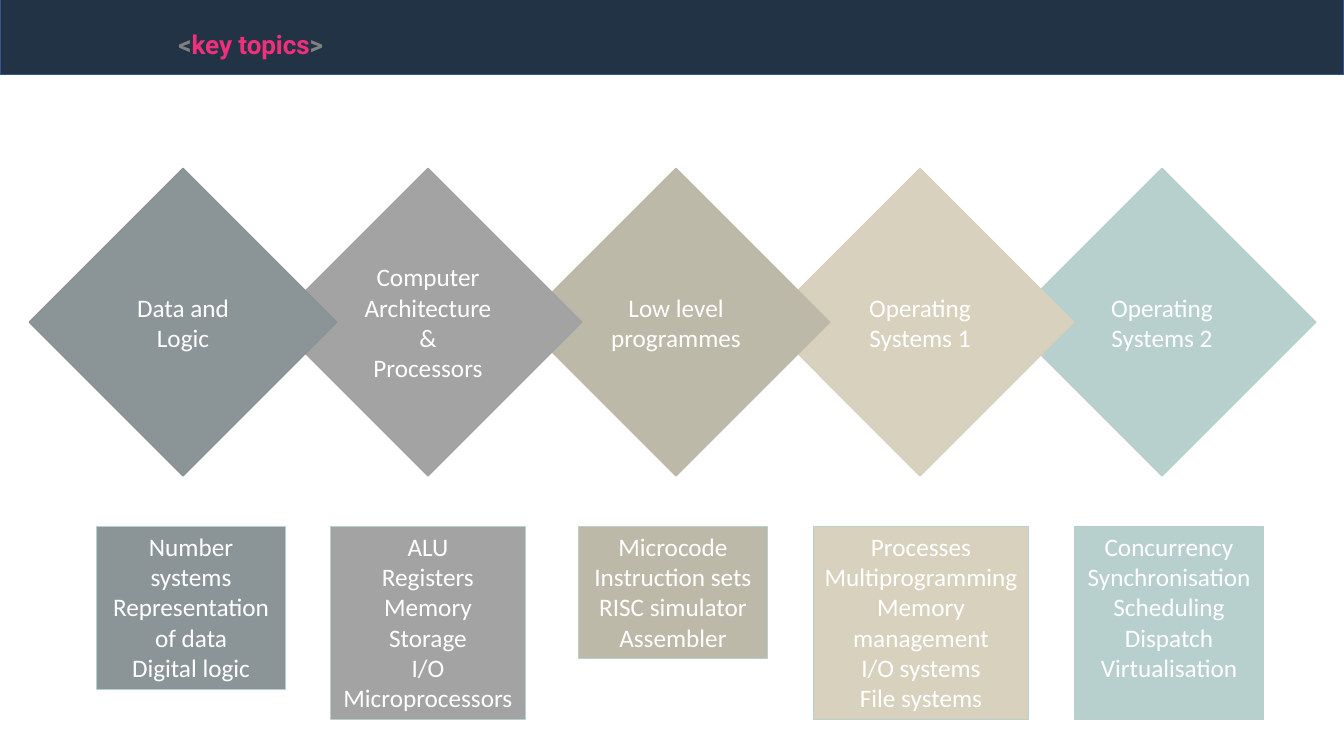
from pptx import Presentation
from pptx.dml.color import RGBColor
from pptx.enum.shapes import MSO_SHAPE
from pptx.enum.text import MSO_ANCHOR, MSO_AUTO_SIZE, PP_ALIGN
from pptx.util import Pt

RECT, DIAMOND = MSO_SHAPE.RECTANGLE, MSO_SHAPE.DIAMOND
TOP, MIDDLE = MSO_ANCHOR.TOP, MSO_ANCHOR.MIDDLE
GROW = MSO_AUTO_SIZE.SHAPE_TO_FIT_TEXT
LEFT, CENTER = PP_ALIGN.LEFT, PP_ALIGN.CENTER

PX = 9144
WIDE, HIGH = 1333, 750
SIDE = 305
WHITE, TEAL = "FFFFFF", "B7D0CE"
LABEL = {"name": "Calibri", "size": Pt(18)}
HEAD = {"name": "Roboto", "size": Pt(32), "bold": True}
BOX = {"word_wrap": True, "auto_size": GROW, "vertical_anchor": TOP}
GEM = {"word_wrap": True, "vertical_anchor": MIDDLE}
TITLE = {"word_wrap": False, "auto_size": GROW, "vertical_anchor": TOP}

TOPICS = [
    {"x": 29, "fill": "8B9597", "edge": "8B9297",
     "name": ["Data and Logic"], "box": (96, 187, 162),
     "list": ["Number systems", "Representation of data", "Digital logic"]},
    {"x": 272, "fill": "A3A3A3", "edge": "A2A2A2",
     "name": ["Computer Architecture &", "Processors"], "box": (328, 193, 192),
     "list": ["ALU", "Registers", "Memory", "Storage", "I/O",
              "Microprocessors"]},
    {"x": 518, "fill": "BCB9A9", "edge": "BFB8AB",
     "name": ["Low level programmes"], "box": (574, 187, 131),
     "list": ["Microcode", "Instruction sets", "RISC simulator",
              "Assembler"]},
    {"x": 760, "fill": "D8D1BE", "edge": "D6D0BD",
     "name": ["Operating Systems 1"], "box": (807, 213, 192),
     "list": ["Processes", "Multiprogramming", "Memory", "management",
              "I/O systems", "File systems"]},
    {"x": 1000, "fill": TEAL, "edge": TEAL,
     "name": ["Operating Systems 2"], "box": (1066, 187, 192),
     "list": ["Concurrency", "Synchronisation", "Scheduling", "Dispatch",
              "Virtualisation"]},
]


def paint(color, code):
    color.rgb = RGBColor.from_string(code)


def apply(item, form):
    for key, value in form.items():
        setattr(item, key, value)


def add_shape(slide, kind, area, fill, edge, width):
    shape = slide.shapes.add_shape(kind, *[n * PX for n in area])
    shape.shadow.inherit = False
    shape.fill.solid()
    paint(shape.fill.fore_color, fill)
    paint(shape.line.color, edge)
    shape.line.width = Pt(width)
    return shape


def add_text(shape, lines, form):
    frame = shape.text_frame
    frame.text = "\n".join(lines)
    apply(frame, form)
    for para in frame.paragraphs:
        para.alignment = CENTER
        for run in para.runs:
            apply(run.font, LABEL)
            paint(run.font.color, WHITE)


def add_title(slide, parts):
    title = slide.shapes.title
    tree = title.element.getparent()
    tree.append(title.element)
    area = {"left": 167, "top": 18, "width": 173, "height": 64}
    apply(title, {key: n * PX for key, n in area.items()})
    apply(title.text_frame, TITLE)
    para = title.text_frame.paragraphs[0]
    para.alignment = LEFT
    for text, code in parts:
        run = para.add_run()
        run.text = text
        apply(run.font, HEAD)
        paint(run.font.color, code)
        run.font._element.set("baseline", "30000")


def main():
    deck = Presentation()
    deck.slide_width, deck.slide_height = WIDE * PX, HIGH * PX
    slide = deck.slides.add_slide(deck.slide_layouts[5])
    add_shape(slide, RECT, (0, -4, WIDE, 78), "223346", "325491", 1)
    for topic in reversed(TOPICS):
        x, width, height = topic["box"]
        box = add_shape(slide, RECT, (x, 522, width, height),
                        topic["fill"], TEAL, 0.75)
        add_text(box, topic["list"], BOX)
        gem = add_shape(slide, DIAMOND, (topic["x"], 167, SIDE, SIDE),
                        topic["fill"], topic["edge"], 1)
        add_text(gem, topic["name"], GEM)
    add_title(slide, [("<", "808080"), ("key topics", "F1307C"),
                      (">", "808080")])
    deck.save("out.pptx")


if __name__ == "__main__":
    main()
